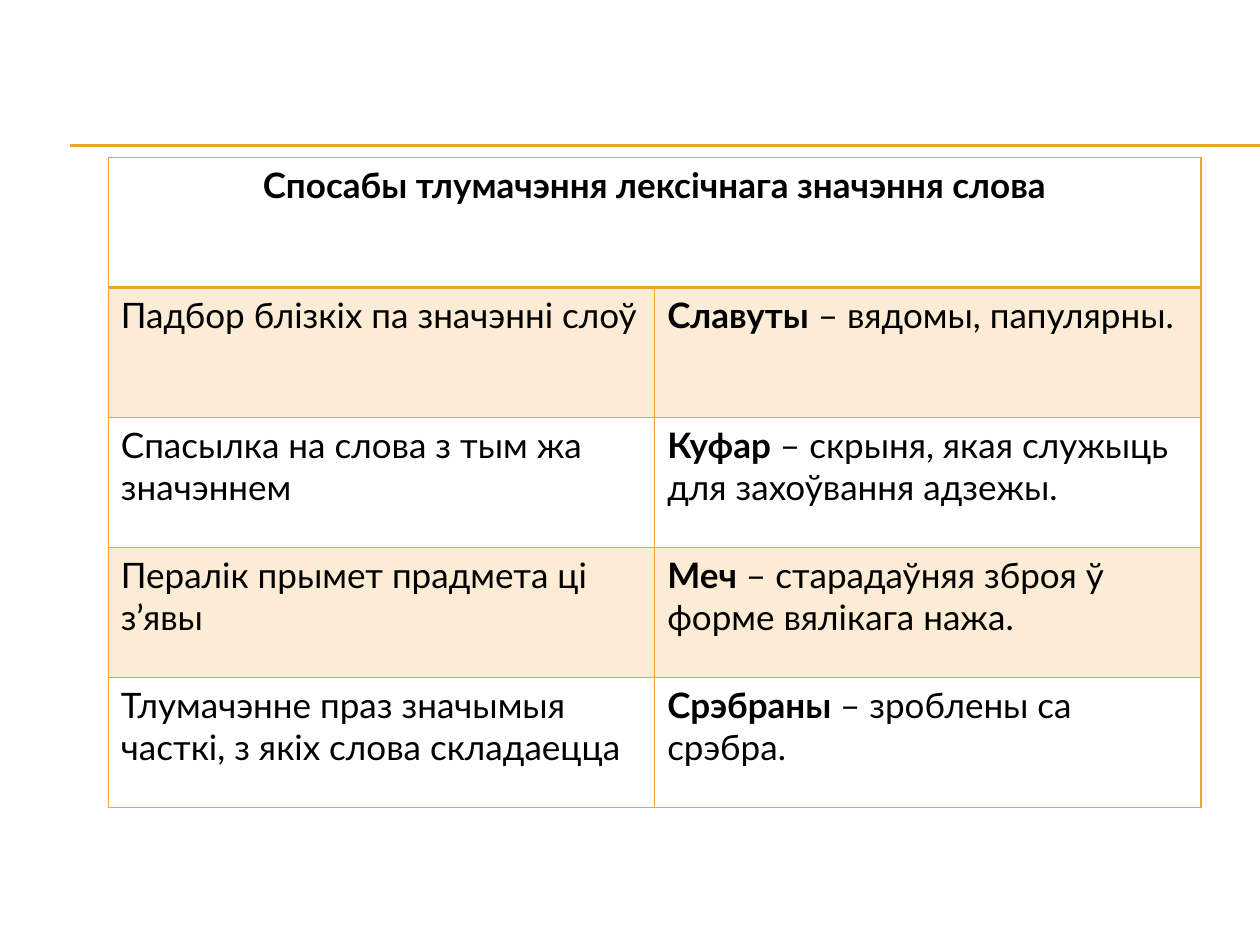
from lxml import etree
from pptx import Presentation
from pptx.dml.color import RGBColor
from pptx.enum.shapes import MSO_CONNECTOR
from pptx.enum.text import PP_ALIGN
from pptx.oxml.ns import qn
from pptx.util import Pt

STRAIGHT = MSO_CONNECTOR.STRAIGHT
LEFT, CENTER = PP_ALIGN.LEFT, PP_ALIGN.CENTER
ORANGE, BLACK = "F0A22E", "000000"
FONT, TEXT_SIZE = "Lato", 20
BAND_OPACITY = 20

HEADING = "Спосабы тлумачэння лексічнага значэння слова"
# way of explaining, example word, its explanation
WAYS = [
    ("Падбор блізкіх па значэнні слоў", "Славуты", " – вядомы, папулярны."),
    ("Спасылка на слова з тым жа значэннем", "Куфар",
     " – скрыня, якая служыць для захоўвання адзежы."),
    ("Пералік прымет прадмета ці з’явы", "Меч",
     " – старадаўняя зброя ў форме вялікага нажа."),
    ("Тлумачэнне праз значымыя часткі, з якіх слова складаецца",
     "Срэбраны ", "– зроблены са срэбра."),
]

SLIDE_WIDTH, SLIDE_HEIGHT = 720, 540
RULE_LEFT, RULE_TOPS = 40.3, (82.8, 83.5)
TABLE_LEFT, TABLE_TOP = 61.9, 90
COLUMN_WIDTH, ROW_HEIGHT = 312.2, 74.3


def color(value):
    return RGBColor.from_string(value)


def add_text(cell, text, bold=False, align=LEFT):
    """Append one span to the cell's paragraph."""
    para = cell.text_frame.paragraphs[0]
    para.alignment = align
    span = para.add_run()
    span.text = text
    span.font.name = FONT
    span.font.size = Pt(TEXT_SIZE)
    span.font.bold = bold
    span.font.color.rgb = color(BLACK)


def set_fill(cell, banded):
    if not banded:
        cell.fill.background()
        return
    cell.fill.solid()
    cell.fill.fore_color.rgb = color(ORANGE)
    tint = cell._tc.tcPr.find(".//" + qn("a:srgbClr"))
    etree.SubElement(tint, qn("a:alpha"), val=str(BAND_OPACITY * 1000))


def set_borders(cell, top=1, bottom=1):
    properties = cell._tc.get_or_add_tcPr()
    widths = {"a:lnL": 1, "a:lnR": 1, "a:lnT": top, "a:lnB": bottom}
    for place, (tag, width) in enumerate(widths.items()):
        line = etree.Element(qn(tag), w=str(Pt(width)))
        fill = etree.SubElement(line, qn("a:solidFill"))
        etree.SubElement(fill, qn("a:srgbClr"), val=ORANGE)
        properties.insert(place, line)


def add_rule(page, top):
    rule = page.shapes.add_connector(
        STRAIGHT, Pt(RULE_LEFT), Pt(top), Pt(SLIDE_WIDTH), Pt(top))
    rule.line.color.rgb = color(ORANGE)
    rule.line.width = Pt(0.75)
    etree.SubElement(rule._element.spPr, qn("a:effectLst"))


def add_ways_table(page):
    row_count = len(WAYS) + 1
    table = page.shapes.add_table(
        row_count, 2, Pt(TABLE_LEFT), Pt(TABLE_TOP),
        Pt(2 * COLUMN_WIDTH), Pt(row_count * ROW_HEIGHT)).table
    table.first_row = table.horz_banding = False
    for column in table.columns:
        column.width = Pt(COLUMN_WIDTH)
    for index, row in enumerate(table.rows):
        row.height = Pt(ROW_HEIGHT)
        for cell in row.cells:
            set_fill(cell, banded=index % 2 == 1)
            set_borders(cell, top=2 if index == 1 else 1,
                        bottom=2 if index == 0 else 1)

    heading = table.cell(0, 0)
    heading.merge(table.cell(0, 1))
    add_text(heading, HEADING, bold=True, align=CENTER)
    for index, (way, word, meaning) in enumerate(WAYS, start=1):
        add_text(table.cell(index, 0), way)
        example = table.cell(index, 1)
        add_text(example, word, bold=True)
        add_text(example, meaning)


def main():
    deck = Presentation()
    deck.slide_width, deck.slide_height = Pt(SLIDE_WIDTH), Pt(SLIDE_HEIGHT)
    page = deck.slides.add_slide(deck.slide_layouts[6])
    for top in RULE_TOPS:
        add_rule(page, top)
    add_ways_table(page)
    deck.save("out.pptx")


if __name__ == "__main__":
    main()
